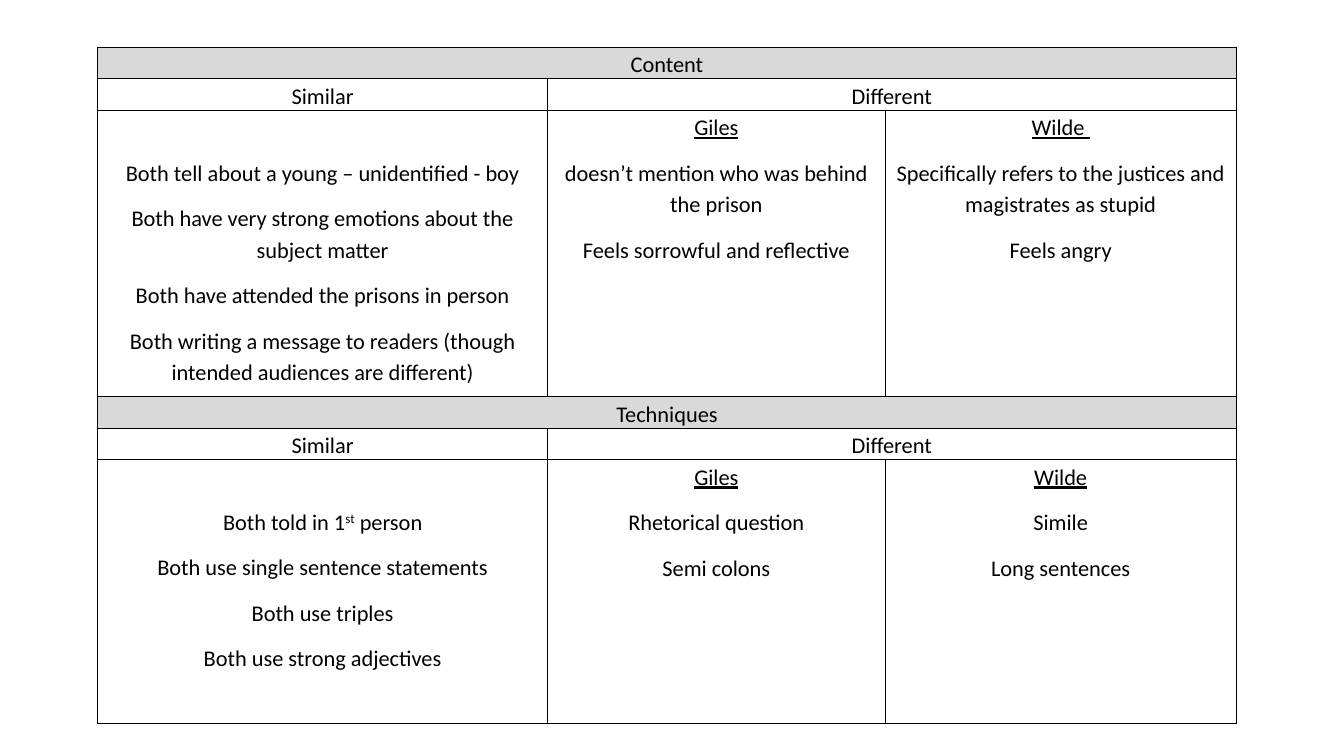
from pptx import Presentation
from pptx.dml.color import RGBColor as RGB
from pptx.enum.text import PP_ALIGN as AL
from pptx.oxml import parse_xml
from pptx.oxml.ns import nsdecls
from pptx.util import Pt

SECTIONS = [
    {
        "title": "Content",
        "similar": [
            "Both tell about a young – unidentified - boy",
            "Both have very strong emotions about the subject matter",
            "Both have attended the prisons in person",
            "Both writing a message to readers (though intended audiences are different)",
        ],
        "different": [
            ("Giles", ["doesn’t mention who was behind the prison",
                       "Feels sorrowful and reflective"]),
            ("Wilde ", ["Specifically refers to the justices and magistrates as stupid",
                        "Feels angry"]),
        ],
    },
    {
        "title": "Techniques",
        "similar": [
            [("Both told in 1", False), ("st", True), (" person", False)],
            "Both use single sentence statements",
            "Both use triples",
            "Both use strong adjectives",
        ],
        "different": [
            ("Giles", ["Rhetorical question", "Semi colons"]),
            ("Wilde", ["Simile", "Long sentences"]),
        ],
    },
]
COLORS = {"text": "000000", "border": "000000", "band": "D9D9D9"}
FONT = "Calibri"
PX = 9144
LEFT, TOP = 97, 47
COL_WIDTHS = [446, 335, 348]
ROW_HEIGHTS = [31, 31, 284, 31, 31, 262]
SIDE_MARGIN = 6
HEADING_DROP = 45


def px(n):
    return n * PX


def write(cell, lines, heading=None):
    tf = cell.text_frame
    items = ([heading] if heading else []) + lines
    for i, line in enumerate(items):
        p = tf.paragraphs[0] if i == 0 else tf.add_paragraph()
        p.alignment = AL.CENTER
        p.line_spacing = 1.15
        p.space_after = Pt(10)
        runs = [(line, False)] if isinstance(line, str) else line
        for text, raised in runs:
            r = p.add_run()
            r.text = text
            r.font.name = FONT
            r.font.size = Pt(16)
            r.font.color.rgb = RGB.from_string(COLORS["text"])
            if heading and i == 0:
                r.font.underline = True
            if raised:
                r._r.get_or_add_rPr().set("baseline", "30000")


def style(cell):
    cell.margin_left = cell.margin_right = px(SIDE_MARGIN)
    cell.margin_top = cell.margin_bottom = 0
    cell.fill.background()
    tcPr = cell._tc.get_or_add_tcPr()
    for i, side in enumerate(("lnL", "lnR", "lnT", "lnB")):
        tcPr.insert(i, parse_xml(
            f'<a:{side} {nsdecls("a")} w="{Pt(1)}"><a:solidFill>'
            f'<a:srgbClr val="{COLORS["border"]}"/></a:solidFill></a:{side}>'))


def main():
    prs = Presentation()
    prs.slide_width, prs.slide_height = px(1333), px(750)
    slide = prs.slides.add_slide(prs.slide_layouts[6])
    table = slide.shapes.add_table(
        len(ROW_HEIGHTS), len(COL_WIDTHS), px(LEFT), px(TOP),
        px(sum(COL_WIDTHS)), px(sum(ROW_HEIGHTS))).table
    table.first_row = table.horz_banding = False
    for col, width in zip(table.columns, COL_WIDTHS):
        col.width = px(width)
    for row, height in zip(table.rows, ROW_HEIGHTS):
        row.height = px(height)
    for cell in table.iter_cells():
        style(cell)

    for n, section in enumerate(SECTIONS):
        top = 3 * n
        band = table.cell(top, 0)
        band.merge(table.cell(top, 2))
        band.fill.solid()
        band.fill.fore_color.rgb = RGB.from_string(COLORS["band"])
        write(band, [section["title"]])
        write(table.cell(top + 1, 0), ["Similar"])
        different = table.cell(top + 1, 1)
        different.merge(table.cell(top + 1, 2))
        write(different, ["Different"])
        similar = table.cell(top + 2, 0)
        similar.margin_top = px(HEADING_DROP)
        write(similar, section["similar"])
        for c, (poet, points) in enumerate(section["different"], 1):
            write(table.cell(top + 2, c), points, poet)

    prs.save("out.pptx")


if __name__ == "__main__":
    main()
